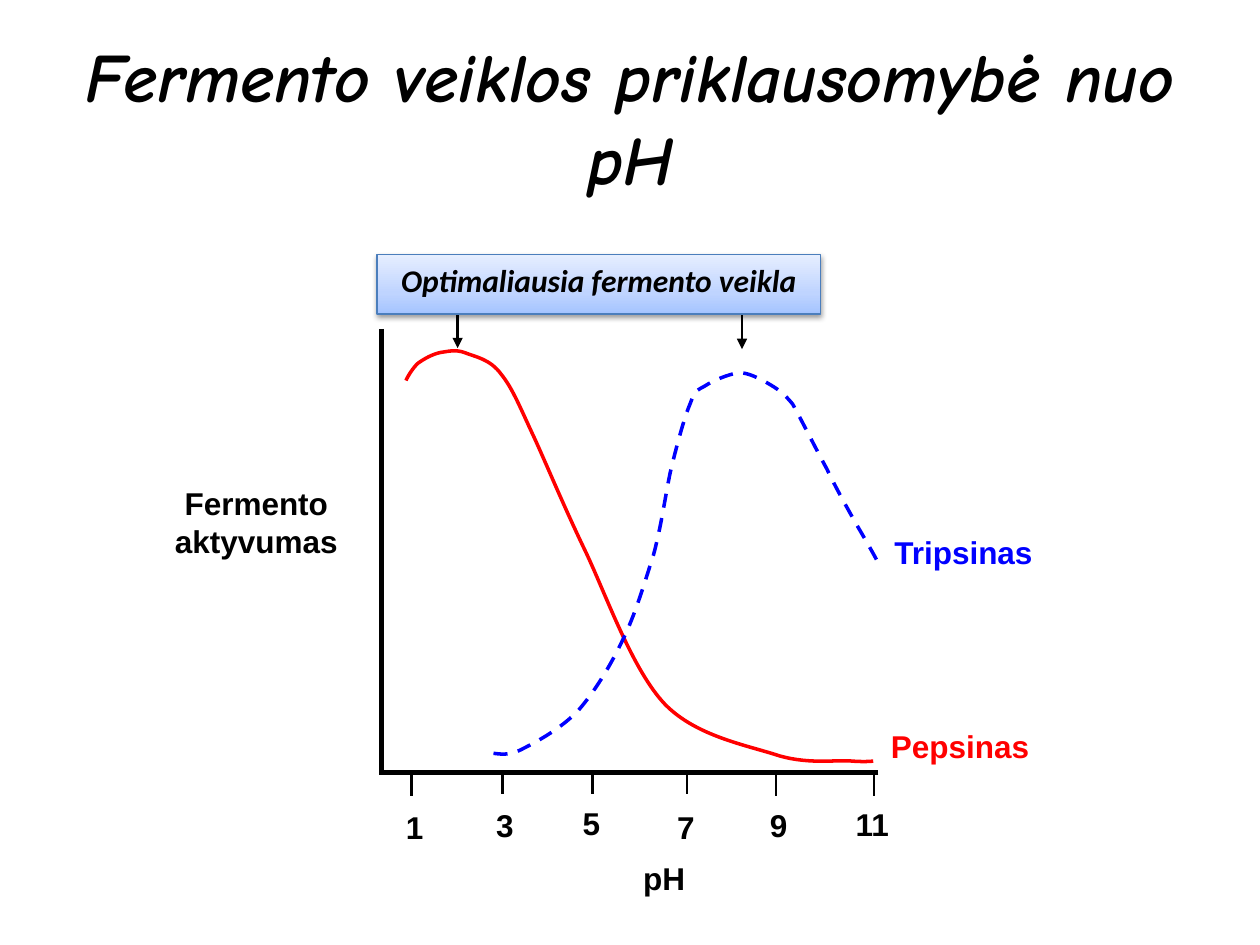
"""Build a slide on how enzyme activity depends on pH."""
from copy import deepcopy

from lxml import etree
from pptx import Presentation
from pptx.dml.color import RGBColor
from pptx.enum import dml, shapes, text
from pptx.oxml.ns import qn
from pptx.util import Pt

BLACK = RGBColor(0, 0, 0)
RED = RGBColor(255, 0, 0)
BLUE = RGBColor(0, 0, 255)
BOX_EDGE = RGBColor(0x4B, 0x7E, 0xBC)
BOX_STOPS = [
    (0, RGBColor(0xA4, 0xC4, 0xFF)),
    (0.35, RGBColor(0xBF, 0xD4, 0xFF)),
    (1, RGBColor(0xE6, 0xEE, 0xFF)),
]

CENTER, LEFT = text.PP_ALIGN.CENTER, text.PP_ALIGN.LEFT
LABEL = dict(name="Arial", size=Pt(18), bold=True)
BOX_FONT = dict(name="Calibri", size=Pt(18), bold=True, italic=True)
TITLE_FONT = dict(name="Comic Neue", size=Pt(39.6), bold=True, italic=True)

TITLE = ("Fermento veiklos priklausomybė nuo pH", (36, 21.5, 648, 90))
BOX = ("Optimaliausia fermento veikla", (215.5, 145.5, 253.5, 34))
LABELS = [
    ("Fermento aktyvumas", (88.5, 273, 116, 55.5), CENTER, BLACK),
    ("Tripsinas", (504, 301, 119.5, 34.5), LEFT, BLUE),
    ("Pepsinas", (502, 412, 121.5, 29), LEFT, RED),
    ("pH", (342.5, 487.5, 74, 24.5), CENTER, BLACK),
]
OPTIMUM_ARROWS = [(261.5, 150, 261.5, 199), (424, 151, 424, 199.5)]
AXES = [(218, 188, 218, 443), (502, 441.5, 219, 441.5)]
TICK_LENGTH = 13
TICKS = [
    ("1", 235, 442, 237, 458),
    ("3", 287, 440.5, 288.5, 457),
    ("5", 338.5, 440.5, 338, 456),
    ("7", 392.5, 440.5, 392, 458),
    ("9", 443.5, 442, 445, 457),
    ("11", 499.5, 442, 498.5, 456.5),
]
PEPSIN = [
    (232, 217.5),
    (232.5, 216), (236, 210), (239, 207.5),
    (242.5, 205), (247, 202.5), (251.5, 201.5),
    (255.5, 201), (260, 199.5), (265.5, 201.5),
    (271.5, 204), (280, 205), (286.5, 214),
    (293, 222), (297.5, 233.5), (305.5, 250.5),
    (313, 267), (322.5, 290), (335, 316),
    (347, 341.5), (361.5, 383), (380, 402.5),
    (398, 421), (427.5, 426), (445.5, 432),
    (463.5, 437), (478, 434), (487.5, 435),
    (496, 435.5), (496, 435), (499, 435),
]
TRYPSIN = [
    (282, 430.5),
    (286.5, 431), (291.5, 432), (299.5, 427.5),
    (307.5, 423.5), (321, 416), (330.5, 406),
    (340, 395), (348.5, 381), (355.5, 366.5),
    (363, 351.5), (368.5, 332.5), (373.5, 317),
    (378, 300), (380, 284.5), (383, 270),
    (386.5, 255.5), (391, 238.5), (394.5, 230.5),
    (397.5, 222), (399, 223), (403, 220.5),
    (407.5, 217.5), (416, 214), (422, 213),
    (427.5, 213), (432, 215.5), (437, 218),
    (442, 221), (446.5, 223), (453, 231),
    (458, 240), (466.5, 257), (472.5, 268),
    (478, 279.5), (484, 290), (489, 299),
    (494, 307.5), (499.5, 317), (502, 322),
]


def write(s, words, font, color=BLACK, align=CENTER, anchor=text.MSO_ANCHOR.TOP):
    tf = s.text_frame
    tf.word_wrap = True
    tf.vertical_anchor = anchor
    p = tf.paragraphs[0]
    p.alignment = align
    r = p.add_run()
    r.text = words
    for key, value in font.items():
        setattr(r.font, key, value)
    r.font.color.rgb = color


def add_text(sp, words, place, font, **style):
    write(sp.add_textbox(*map(Pt, place)), words, font, **style)


def add_line(sp, ends, width, arrow=False):
    s = sp.add_connector(shapes.MSO_CONNECTOR.STRAIGHT, *map(Pt, ends))
    s.line.color.rgb = BLACK
    s.line.width = Pt(width)
    if arrow:
        etree.SubElement(s.line._get_or_add_ln(), qn("a:tailEnd"), type="triangle")
    etree.SubElement(s.element.spPr, qn("a:effectLst"))


def add_curve(sp, points, color, dash=None):
    start, *rest = [(Pt(x), Pt(y)) for x, y in points]
    builder = sp.build_freeform(*start)
    builder.add_line_segments(rest, close=False)
    s = builder.convert_to_shape()
    outline = s.element.find(".//" + qn("a:path"))
    segments = outline.findall(qn("a:lnTo"))
    for i in range(0, len(segments), 3):
        bezier = etree.SubElement(outline, qn("a:cubicBezTo"))
        for segment in segments[i:i + 3]:
            bezier.append(segment[0])
            outline.remove(segment)
    s.fill.background()
    s.shadow.inherit = False
    s.line.color.rgb = color
    s.line.width = Pt(2)
    if dash:
        s.line.dash_style = dash


def add_box(sp, words, place):
    s = sp.add_shape(shapes.MSO_SHAPE.RECTANGLE, *map(Pt, place))
    s.fill.gradient()
    s.fill.gradient_angle = 90
    stops = s.element.spPr.find(".//" + qn("a:gsLst"))
    stops.append(deepcopy(stops[-1]))
    for stop, (position, color) in zip(s.fill.gradient_stops, BOX_STOPS):
        stop.position = position
        stop.color.rgb = color
    s.line.color.rgb = BOX_EDGE
    s.line.width = Pt(0.75)
    s.shadow.inherit = False
    effects = s.element.spPr.find(qn("a:effectLst"))
    shadow = etree.SubElement(effects, qn("a:outerShdw"), blurRad=str(Pt(3.1)),
                              dist=str(Pt(1.6)), dir="5400000", rotWithShape="0")
    shade = etree.SubElement(shadow, qn("a:srgbClr"), val=str(BLACK))
    etree.SubElement(shade, qn("a:alpha"), val="38000")
    write(s, words, BOX_FONT)


def main():
    prs = Presentation()
    prs.slide_width, prs.slide_height = Pt(720), Pt(540)
    sp = prs.slides.add_slide(prs.slide_layouts[6]).shapes
    add_text(sp, *TITLE, TITLE_FONT, anchor=text.MSO_ANCHOR.MIDDLE)
    for ends in OPTIMUM_ARROWS:
        add_line(sp, ends, 1.5, arrow=True)
    add_box(sp, *BOX)
    for ends in AXES:
        add_line(sp, ends, 3)
    for _, x, y, _, _ in TICKS:
        add_line(sp, (x, y, x, y + TICK_LENGTH), 1.5)
    add_curve(sp, PEPSIN, RED)
    add_curve(sp, TRYPSIN, BLUE, dml.MSO_LINE.DASH)
    for words, place, align, color in LABELS:
        add_text(sp, words, place, LABEL, align=align, color=color)
    for words, _, _, middle, top in TICKS:
        width = 29 if len(words) == 1 else 50
        add_text(sp, words, (middle - width / 2, top, width, 29), LABEL)
    prs.save("out.pptx")


if __name__ == "__main__":
    main()
